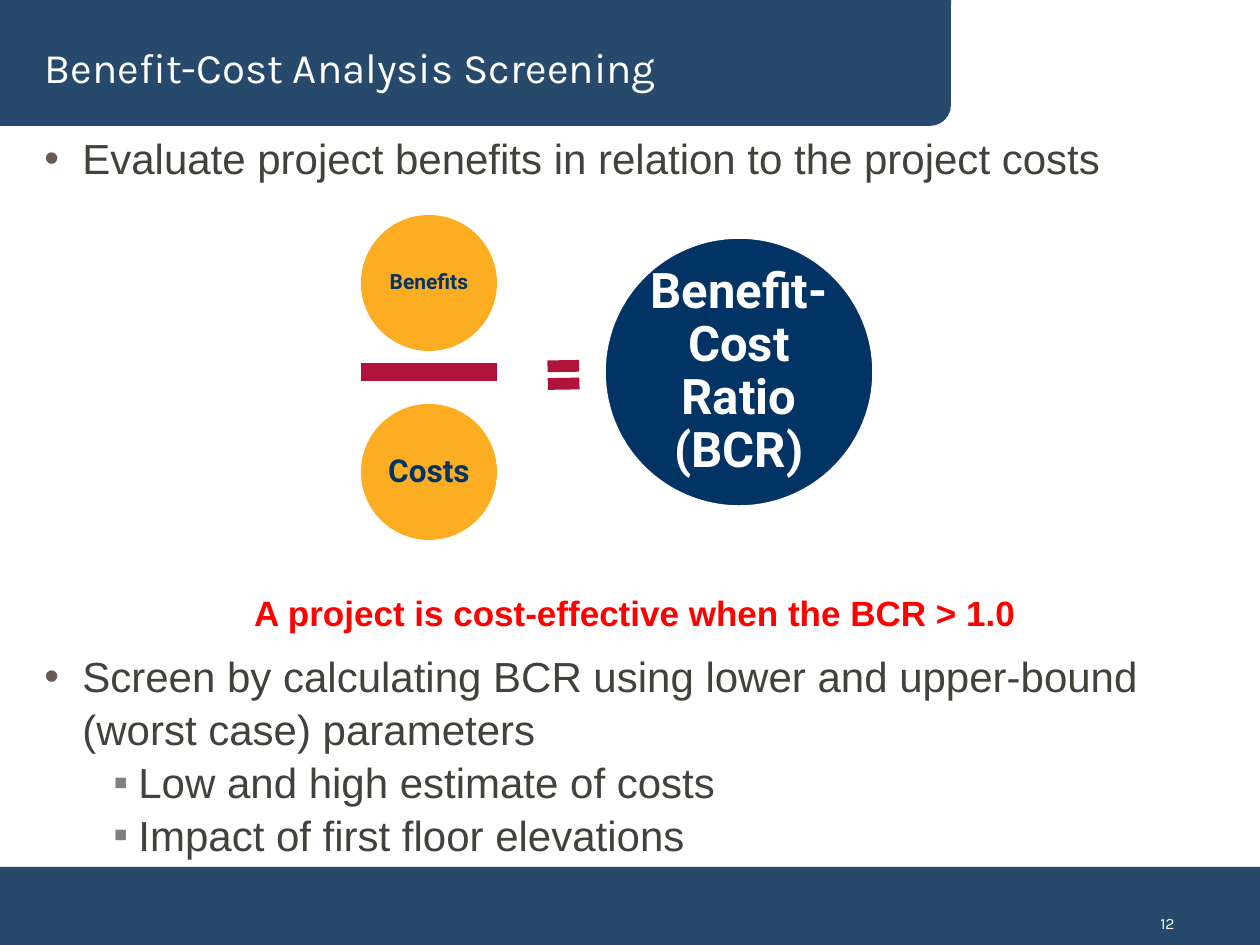
from pptx import Presentation
from pptx import util as u
from pptx.dml.color import RGBColor
from pptx.enum import shapes, text
from pptx.oxml import parse_xml
from pptx.oxml.ns import nsdecls

PX = 914400 / 126
NAVY = RGBColor(0x26, 0x49, 0x6C)
DEEP_BLUE = RGBColor(0x01, 0x33, 0x65)
AMBER = RGBColor(0xFC, 0xAD, 0x22)
CRIMSON = RGBColor(0xB1, 0x14, 0x3B)
RED = RGBColor(0xFF, 0x00, 0x00)
INK = RGBColor(0x40, 0x43, 0x3B)
WHITE = RGBColor(0xFF, 0xFF, 0xFF)
LEVELS = [("•", "675C53", 38, -38), ("▪", "7F7F7F", 94, -25)]


def px(length):
    """Turn px into EMU."""
    return u.Emu(round(length * PX))


def add_run(paragraph, words, size, color, font="Arial", bold=False):
    """Add one formatted run."""
    run = paragraph.add_run()
    run.text = words
    run.font.name, run.font.size, run.font.bold = font, u.Pt(size), bold
    run.font.color.rgb = color


def add_filled(slide, kind, box, fill):
    """Add a flat preset shape without outline."""
    shape = slide.shapes.add_shape(kind, *map(px, box))
    shape.shadow.inherit = False
    shape.fill.solid()
    shape.fill.fore_color.rgb = fill
    shape.line.fill.background()
    return shape


def add_frame(slide, box):
    """Add a wrapping text box and return its frame."""
    frame = slide.shapes.add_textbox(*map(px, box)).text_frame
    frame.word_wrap = True
    return frame


def add_header(slide, box, title):
    """Place the banner with the title on it."""
    left, top, width, height = box
    banner = add_filled(slide, shapes.MSO_SHAPE.ROUND_1_RECTANGLE, box, NAVY)
    banner._element.spPr.xfrm.set("flipV", "1")
    heading = slide.shapes.title
    slide.shapes._spTree.append(heading._element)
    heading.left, heading.top = px(left + 32), px(top + 10)
    heading.width, heading.height = px(width + 47), px(height - 38)
    frame = heading.text_frame
    frame.word_wrap = True
    frame.auto_size = text.MSO_AUTO_SIZE.NONE
    frame.vertical_anchor = text.MSO_ANCHOR.BOTTOM
    frame.paragraphs[0].alignment = text.PP_ALIGN.LEFT
    add_run(frame.paragraphs[0], title, 24, WHITE, "Karla")


def add_footer(slide, box, number):
    """Place the bottom band with the page number."""
    left, top, width, height = box
    add_filled(slide, shapes.MSO_SHAPE.RECTANGLE, box, NAVY)
    frame = add_frame(slide, (left + width - 357, top + 35, 284, height - 35))
    frame.vertical_anchor = text.MSO_ANCHOR.MIDDLE
    frame.paragraphs[0].alignment = text.PP_ALIGN.RIGHT
    add_run(frame.paragraphs[0], number, 9, WHITE, "Karla")


def add_bullets(slide, box, items):
    """Place a bulleted list of (level, words) items."""
    frame = add_frame(slide, box)
    for index, (level, words) in enumerate(items):
        paragraph = frame.add_paragraph() if index else frame.paragraphs[0]
        mark, color, margin, indent = LEVELS[level]
        props = paragraph._p.get_or_add_pPr()
        props.set("marL", str(px(margin)))
        props.set("indent", str(px(indent)))
        props.append(parse_xml(
            f'<a:buClr {nsdecls("a")}><a:srgbClr val="{color}"/></a:buClr>'))
        props.append(parse_xml(f'<a:buFont {nsdecls("a")} typeface="Arial"/>'))
        props.append(parse_xml(f'<a:buChar {nsdecls("a")} char="{mark}"/>'))
        paragraph.level = level
        paragraph.line_spacing = 1.05
        add_run(paragraph, words, 24, INK)


def add_callout(slide, box, words):
    """Place the centred key message."""
    paragraph = add_frame(slide, box).paragraphs[0]
    paragraph.alignment = text.PP_ALIGN.CENTER
    paragraph.line_spacing = 1.05
    add_run(paragraph, words, 20, RED, bold=True)


def add_circle(slide, box, fill, words, size, color, inset):
    """Place a labelled circle of the formula."""
    circle = add_filled(slide, shapes.MSO_SHAPE.OVAL, box, fill)
    frame = circle.text_frame
    frame.word_wrap = True
    frame.vertical_anchor = text.MSO_ANCHOR.MIDDLE
    frame.margin_left = frame.margin_right = px(inset)
    frame.margin_top = frame.margin_bottom = px(inset)
    frame.paragraphs[0].alignment = text.PP_ALIGN.CENTER
    frame.paragraphs[0].line_spacing = 0.9
    add_run(frame.paragraphs[0], words, size, color, "Roboto", True)
    return circle


def add_formula(slide, box):
    """Place benefits over costs equals the ratio."""
    left, top, width, height = box
    term, ratio = 136, 270
    add_circle(slide, (left, top, term, term), AMBER, "Benefits", 12, DEEP_BLUE, 2)
    add_filled(slide, shapes.MSO_SHAPE.MATH_MINUS,
               (left - 25, top + 118, term + 50, 78), CRIMSON)
    add_circle(slide, (left, top + height - term, term, term),
               AMBER, "Costs", 18, DEEP_BLUE, 4)
    equals = add_filled(slide, shapes.MSO_SHAPE.MATH_EQUAL,
                        (left + 181, top + 135, 43, 50), CRIMSON)
    equals.rotation = 359.1
    result = add_circle(slide, (left + width - ratio, top + 22, ratio, ratio),
                        DEEP_BLUE, "Benefit-Cost Ratio (BCR)", 28, WHITE, 5)
    result.line.color.rgb = WHITE
    result.line.width = u.Pt(2)


def main():
    """Build and save the slide."""
    deck = Presentation()
    deck.slide_width, deck.slide_height = px(1260), px(945)
    slide = deck.slides.add_slide(deck.slide_layouts[5])
    add_header(slide, (0, 0, 951, 126), "Benefit-Cost Analysis Screening")
    add_footer(slide, (0, 867, 1260, 78), "12")
    add_bullets(slide, (32, 124, 1206, 62), [
        (0, "Evaluate project benefits in relation to the project costs")])
    add_formula(slide, (361, 215, 513, 325))
    add_callout(slide, (32, 583, 1206, 54),
                "A project is cost-effective when the BCR > 1.0")
    add_bullets(slide, (32, 642, 1206, 214), [
        (0, "Screen by calculating BCR using lower and upper-bound "
            "(worst case) parameters"),
        (1, "Low and high estimate of costs"),
        (1, "Impact of first floor elevations")])
    deck.save("out.pptx")


if __name__ == "__main__":
    main()
